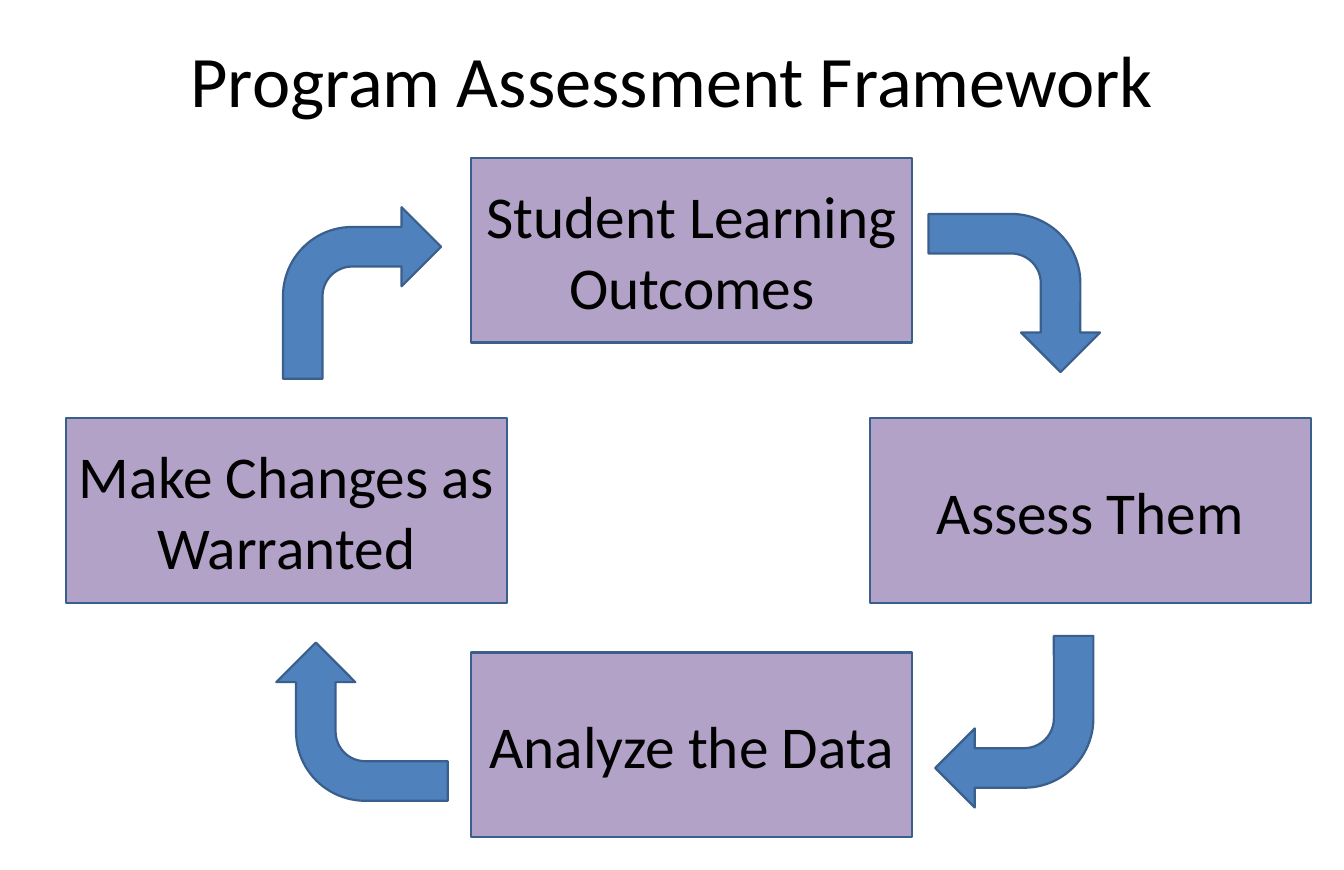
from pptx import Presentation
from pptx.dml.color import RGBColor
from pptx.enum.shapes import MSO_SHAPE as SHAPE
from pptx.enum.text import MSO_ANCHOR as ANCHOR, PP_ALIGN as ALIGN
from pptx.util import Inches, Pt

BOX_SIZE = (5.58, 2.33)
ARROW_SIZE = (2, 2.17)
STEPS = [
    ("Student Learning Outcomes", 5.96, 2),
    ("Assess Them", 11, 5.29),
    ("Analyze the Data", 5.96, 8.25),
    ("Make Changes as Warranted", 0.83, 5.29),
]
ARROWS = [(11.83, 2.62, 90), (11.83, 8.04, 180), (3.58, 8.04, 270), (3.58, 2.62, 0)]


def color(value):
    return RGBColor.from_string(value)


def apply(obj, values):
    for name, value in values.items():
        setattr(obj, name, value)


def write(sp, text, size, margin_x, margin_y):
    tf = sp.text_frame
    apply(tf, {
        "word_wrap": True, "vertical_anchor": ANCHOR.MIDDLE,
        "margin_left": Inches(margin_x), "margin_right": Inches(margin_x),
        "margin_top": Inches(margin_y), "margin_bottom": Inches(margin_y),
    })
    p = tf.paragraphs[0]
    p.alignment = ALIGN.CENTER
    r = p.add_run()
    r.text = text
    apply(r.font, {"name": "Calibri", "size": Pt(size)})
    r.font.color.rgb = color("000000")


def add_title(s, text):
    sp = s.shapes.title
    apply(sp, {"left": Inches(0.85), "top": Inches(0.08),
               "width": Inches(15.3), "height": Inches(1.83)})
    write(sp, text, 66, 0.42, 0.21)


def add_block(s, kind, left, top, size, fill):
    sp = s.shapes.add_shape(kind, *map(Inches, (left, top, *size)))
    sp.shadow.inherit = False
    sp.fill.solid()
    sp.fill.fore_color.rgb = color(fill)
    sp.line.color.rgb = color("3A5F8C")
    sp.line.width = Pt(2)
    return sp


def add_step(s, text, left, top):
    sp = add_block(s, SHAPE.RECTANGLE, left, top, BOX_SIZE, "B3A2C7")
    write(sp, text, 54, 0.1, 0.05)


def add_arrow(s, left, top, rotation):
    sp = add_block(s, SHAPE.BENT_ARROW, left, top, ARROW_SIZE, "4F81BD")
    sp.rotation = rotation


def main():
    prs = Presentation()
    apply(prs, {"slide_width": Inches(17), "slide_height": Inches(11)})
    s = prs.slides.add_slide(prs.slide_layouts[5])
    add_title(s, "Program Assessment Framework")
    for step, arrow in zip(STEPS, ARROWS):
        add_step(s, *step)
        add_arrow(s, *arrow)
    prs.save("out.pptx")


if __name__ == "__main__":
    main()
